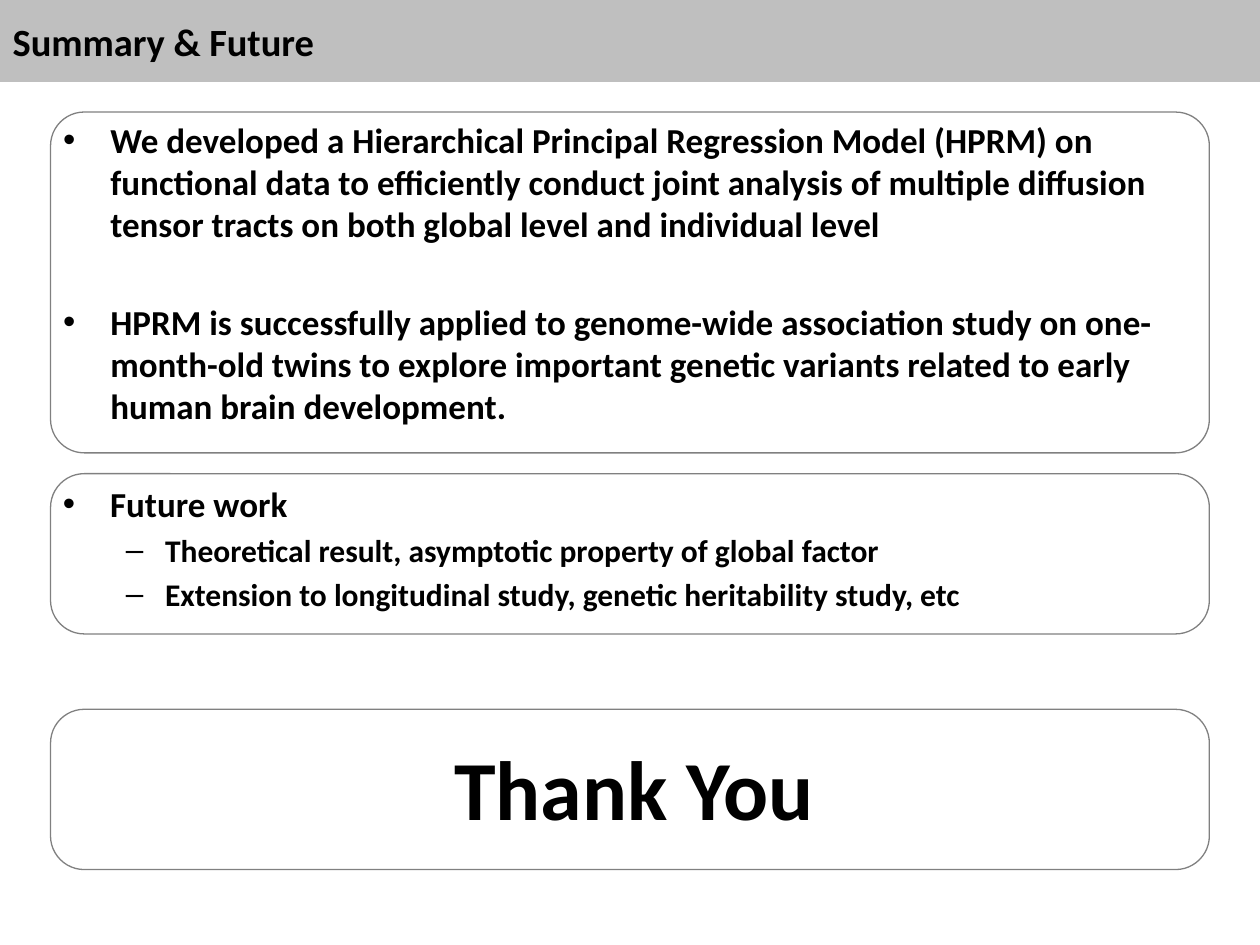
from lxml import etree
from pptx import Presentation
from pptx.dml.color import RGBColor
from pptx.enum.shapes import MSO_SHAPE
from pptx.enum.text import MSO_ANCHOR, MSO_AUTO_SIZE, PP_ALIGN
from pptx.oxml.ns import qn
from pptx.util import Cm, Pt

ROUNDED = MSO_SHAPE.ROUNDED_RECTANGLE
MIDDLE, TOP = MSO_ANCHOR.MIDDLE, MSO_ANCHOR.TOP
LEFT, CENTER = PP_ALIGN.LEFT, PP_ALIGN.CENTER
NO_AUTOFIT = MSO_AUTO_SIZE.NONE

BLACK = RGBColor(0x00, 0x00, 0x00)
BAND_GREY = RGBColor(0xBF, 0xBF, 0xBF)
FRAME_GREY = RGBColor(0x80, 0x80, 0x80)
FONT = "Calibri"
CORNER = Cm(0.68)

LEVELS = [
    {"bullet": "•", "margin": Cm(0.95), "hang": Cm(0.95), "size": 20},
    {"bullet": "–", "margin": Cm(2.06), "hang": Cm(0.79), "size": 18},
]
FINDINGS = [
    (0, 4, "We developed a Hierarchical Principal Regression Model (HPRM) on "
           "functional data to efficiently conduct joint analysis of multiple "
           "diffusion tensor tracts on both global level and individual level"),
    (0, 32, "HPRM is successfully applied to genome-wide association study on "
            "one-month-old twins to explore important genetic variants related "
            "to early human brain development."),
]
FUTURE_WORK = [
    (0, 4, "Future work"),
    (1, 3.6, "Theoretical result, asymptotic property of global factor"),
    (1, 3.6, "Extension to longitudinal study, genetic heritability study, etc"),
]


def place(part, box):
    """Move and size a part to a (left, top, width, height) box."""
    part.left, part.top, part.width, part.height = box


def write(paragraph, text, size, align=LEFT):
    """Fill a paragraph with bold black text."""
    paragraph.text = text
    paragraph.alignment = align
    for run in paragraph.runs:
        run.font.name = FONT
        run.font.size = Pt(size)
        run.font.bold = True
        run.font.color.rgb = BLACK


def set_bullet(paragraph, level):
    """Give a paragraph the bullet and hanging indent of its level."""
    style = LEVELS[level]
    paragraph.level = level
    properties = paragraph._p.get_or_add_pPr()
    properties.set("marL", str(style["margin"]))
    properties.set("indent", str(-style["hang"]))
    etree.SubElement(properties, qn("a:buFont")).set("typeface", "Arial")
    etree.SubElement(properties, qn("a:buChar")).set("char", style["bullet"])


def write_list(frame, items):
    """Write (level, space before, text) items as a bulleted list."""
    frame.word_wrap = True
    frame.auto_size = NO_AUTOFIT
    frame.vertical_anchor = TOP
    for index, (level, gap, text) in enumerate(items):
        paragraph = frame.paragraphs[0] if index == 0 else frame.add_paragraph()
        write(paragraph, text, LEVELS[level]["size"])
        paragraph.space_before = Pt(gap)
        set_bullet(paragraph, level)


def add_frame(slide, box):
    """Outline a box with a rounded grey border."""
    border = slide.shapes.add_shape(ROUNDED, *box)
    border.adjustments[0] = CORNER / box[3]
    border.fill.background()
    border.line.color.rgb = FRAME_GREY
    border.line.width = Pt(0.75)
    border.shadow.inherit = False


def add_title_band(slide, box):
    """Turn the title placeholder into the grey heading band."""
    title = slide.shapes.title
    place(title, box)
    title.fill.solid()
    title.fill.fore_color.rgb = BAND_GREY
    title.text_frame.vertical_anchor = MIDDLE
    title.text_frame.auto_size = NO_AUTOFIT
    write(title.text_frame.paragraphs[0], "Summary & Future", 22)


def add_findings(slide, box):
    """Place the findings list in the body placeholder with its frame."""
    findings = slide.placeholders[1]
    place(findings, box)
    write_list(findings.text_frame, FINDINGS)
    add_frame(slide, box)


def add_future_work(slide, box):
    """Place the future work list with its frame."""
    left, top, width, height = box
    future = slide.shapes.add_textbox(left, top + Cm(0.05), width, height)
    write_list(future.text_frame, FUTURE_WORK)
    add_frame(slide, box)


def add_closing(slide, box):
    """Place the framed closing words."""
    left, top, width, height = box
    add_frame(slide, box)
    words_width, words_height = Cm(7.98), Cm(2.31)
    closing = slide.shapes.add_textbox(
        left + (width - words_width) // 2 + Cm(0.08), top + Cm(0.43),
        words_width, words_height)
    closing.text_frame.word_wrap = False
    write(closing.text_frame.paragraphs[0], "Thank You", 48, CENTER)


def main():
    """Build the summary slide and save it."""
    deck = Presentation()
    deck.slide_width, deck.slide_height = Cm(25.4), Cm(19.05)
    slide = deck.slides.add_slide(deck.slide_layouts[1])
    margin = Cm(1.02)
    panel_width = deck.slide_width - 2 * margin
    add_title_band(slide, (0, 0, deck.slide_width, Cm(1.65)))
    add_findings(slide, (margin, Cm(2.26), panel_width, Cm(6.87)))
    add_future_work(slide, (margin, Cm(9.55), panel_width, Cm(3.23)))
    add_closing(slide, (margin, Cm(14.3), panel_width, Cm(3.23)))
    deck.save("out.pptx")


if __name__ == "__main__":
    main()
